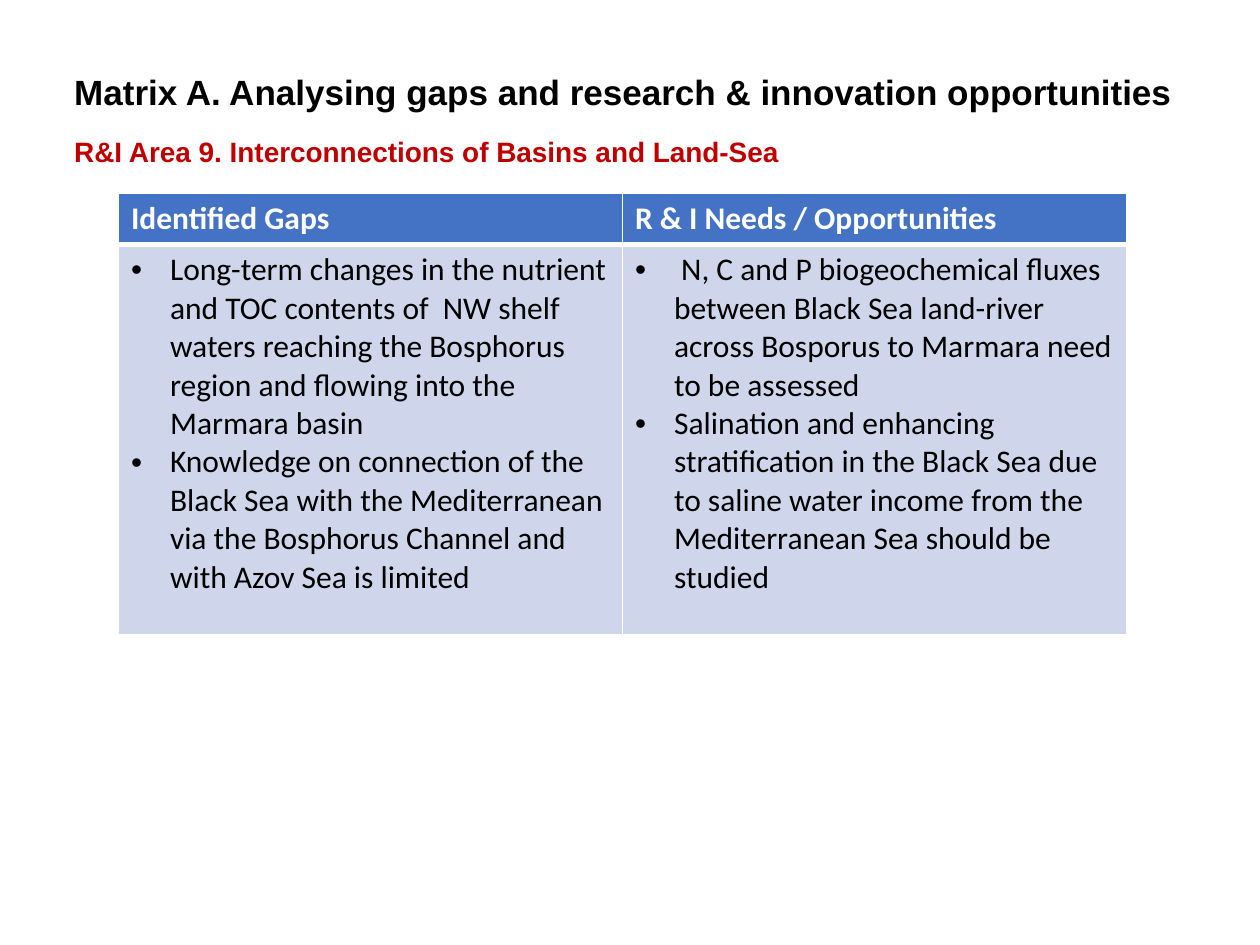
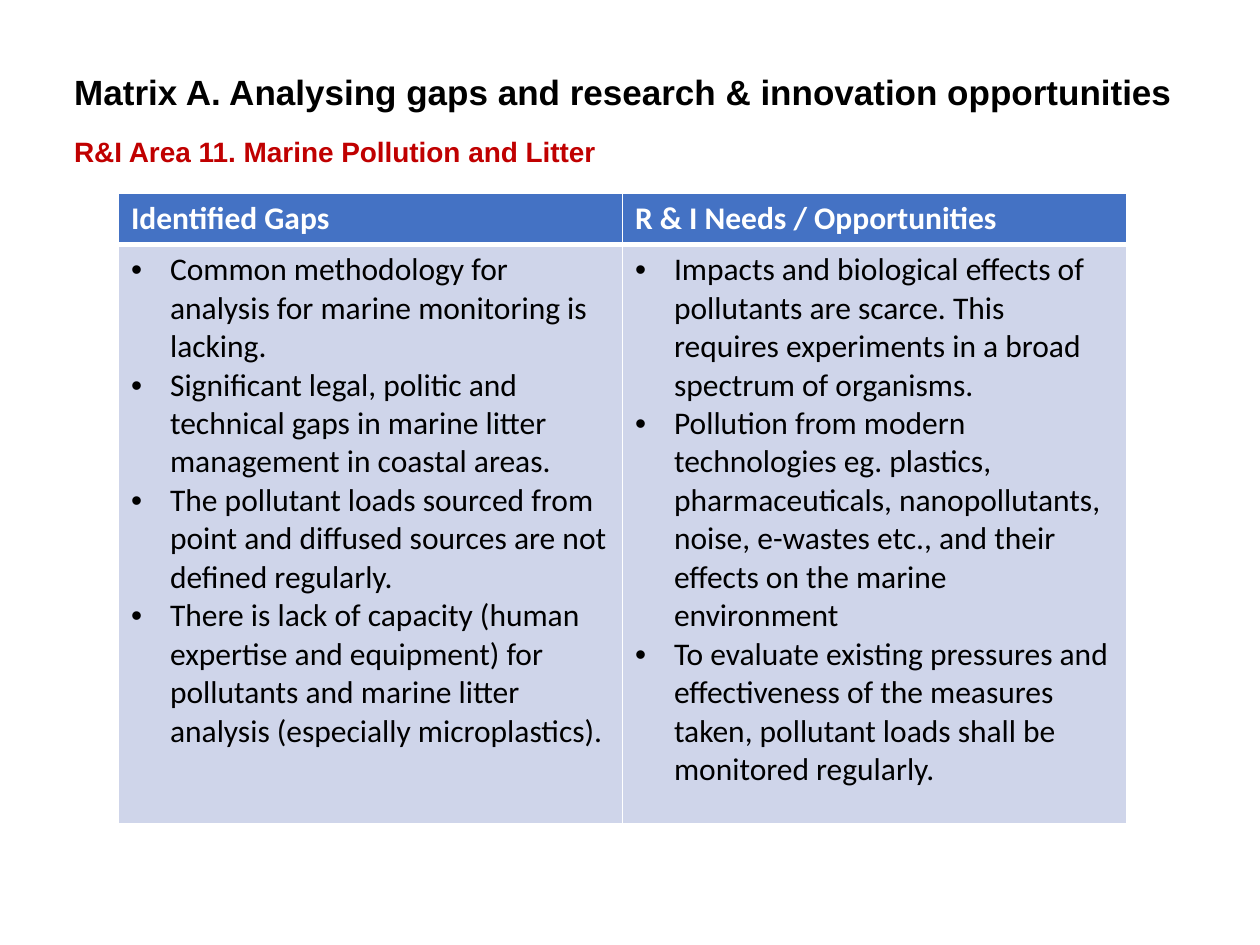
from dataclasses import dataclass

from lxml.etree import SubElement
from pptx import Presentation
from pptx.dml.color import RGBColor
from pptx.enum.text import MSO_ANCHOR as Anchor
from pptx.oxml import parse_xml
from pptx.oxml.ns import nsdecls, qn
from pptx.slide import Slide
from pptx.table import _Cell as Cell
from pptx.text.text import TextFrame
from pptx.util import Inches, Pt

COLORS = {
    "title": "000000",
    "area": "C00000",
    "header": "4472C4",
    "header_text": "FFFFFF",
    "body": "CFD5EA",
    "body_text": "000000",
    "border": "FFFFFF",
}
HEADING_FONT = "Arial"
TABLE_FONT = "Calibri"
TITLE = "Matrix A. Analysing gaps and research & innovation opportunities"
COLUMN_HEADS = ("Identified Gaps", "R & I Needs / Opportunities")

HEADING_LEFT = Inches(0.49)
COLUMN_WIDTH = Inches(4)
HEADER_HEIGHT = Inches(0.41)
BULLET_INDENT = Inches(0.31)
THIN, THICK = Pt(1), Pt(3)


@dataclass
class ResearchArea:
    heading: str
    heading_width: float
    body_height: float
    gaps: list[str]
    needs: list[str]


AREAS = [
    ResearchArea(
        "R&I Area 9. Interconnections of Basins and Land-Sea", 7.75, 3.1,
        gaps=[
            "Long-term changes in the nutrient and TOC contents of  NW shelf waters "
            "reaching the Bosphorus region and flowing into the Marmara basin",
            "Knowledge on connection of the Black Sea with the Mediterranean via "
            "the Bosphorus Channel and with Azov Sea is limited",
        ],
        needs=[
            " N, C and P biogeochemical fluxes between Black Sea land-river across "
            "Bosporus to Marmara need to be assessed",
            "Salination and enhancing stratification in the Black Sea due to saline "
            "water income from the Mediterranean Sea should be studied",
        ],
    ),
    ResearchArea(
        "R&I Area 11. Marine Pollution and Litter", 6.4, 4.6,
        gaps=[
            "Common methodology for analysis for marine monitoring is lacking.",
            "Significant legal, politic and technical gaps in marine litter "
            "management in coastal areas.",
            "The pollutant loads sourced from point and diffused sources are not "
            "defined regularly.",
            "There is lack of capacity (human expertise and equipment) for pollutants "
            "and marine litter analysis (especially microplastics).",
        ],
        needs=[
            "Impacts and biological effects of pollutants are scarce. This requires "
            "experiments in a broad spectrum of organisms.",
            "Pollution from modern technologies eg. plastics, pharmaceuticals, "
            "nanopollutants, noise, e-wastes etc., and their effects on the marine "
            "environment",
            "To evaluate existing pressures and effectiveness of the measures taken, "
            "pollutant loads shall be monitored regularly.",
        ],
    ),
]


def set_text(frame: TextFrame, text: str, font: str, size: int, color: str, bold: bool) -> None:
    frame.text = text
    for paragraph in frame.paragraphs:
        for run in paragraph.runs:
            run.font.name = font
            run.font.size = Pt(size)
            run.font.bold = bold
            run.font.color.rgb = RGBColor.from_string(COLORS[color])


def add_heading(slide: Slide, text: str, top: float, width: float, height: float,
                size: int, color: str, anchor: Anchor) -> None:
    heading = slide.shapes.add_textbox(HEADING_LEFT, Inches(top), Inches(width), Inches(height))
    heading.text_frame.word_wrap = True
    heading.text_frame.vertical_anchor = anchor
    set_text(heading.text_frame, text, HEADING_FONT, size, color, bold=True)


def set_borders(cell: Cell, top: int, bottom: int) -> None:
    widths = {"lnL": THIN, "lnR": THIN, "lnT": top, "lnB": bottom}
    properties = cell._tc.get_or_add_tcPr()
    for position, (side, width) in enumerate(widths.items()):
        properties.insert(position, parse_xml(
            f'<a:{side} {nsdecls("a")} w="{width}"><a:solidFill>'
            f'<a:srgbClr val="{COLORS["border"]}"/></a:solidFill></a:{side}>'))


def add_bullets(frame: TextFrame) -> None:
    for paragraph in frame.paragraphs:
        properties = paragraph._p.get_or_add_pPr()
        properties.set("marL", str(BULLET_INDENT))
        properties.set("indent", str(-BULLET_INDENT))
        SubElement(properties, qn("a:buFont"), typeface="Arial")
        SubElement(properties, qn("a:buChar"), char="•")


def fill_cell(cell: Cell, text: str, part: str, bold: bool, top: int, bottom: int) -> None:
    cell.fill.solid()
    cell.fill.fore_color.rgb = RGBColor.from_string(COLORS[part])
    set_borders(cell, top, bottom)
    set_text(cell.text_frame, text, TABLE_FONT, 18, f"{part}_text", bold)


def add_matrix(slide: Slide, area: ResearchArea) -> None:
    body_height = Inches(area.body_height)
    matrix = slide.shapes.add_table(
        2, len(COLUMN_HEADS), Inches(0.94), Inches(1.53),
        COLUMN_WIDTH * len(COLUMN_HEADS), HEADER_HEIGHT + body_height).table
    matrix.rows[0].height = HEADER_HEIGHT
    matrix.rows[1].height = body_height
    for column, (head, points) in enumerate(zip(COLUMN_HEADS, (area.gaps, area.needs))):
        matrix.columns[column].width = COLUMN_WIDTH
        fill_cell(matrix.cell(0, column), head, "header", True, THIN, THICK)
        body = matrix.cell(1, column)
        fill_cell(body, "\n".join(points), "body", False, THICK, THIN)
        add_bullets(body.text_frame)


def main() -> None:
    deck = Presentation()
    deck.slide_width, deck.slide_height = Inches(10), Inches(7.5)
    blank = deck.slide_layouts[6]
    for area in AREAS:
        slide = deck.slides.add_slide(blank)
        add_heading(slide, TITLE, 0.43, 8.98, 0.59, 20, "title", Anchor.MIDDLE)
        add_heading(slide, area.heading, 1.02, area.heading_width, 0.37, 16, "area", Anchor.TOP)
        add_matrix(slide, area)
    deck.save("out.pptx")


if __name__ == "__main__":
    main()
